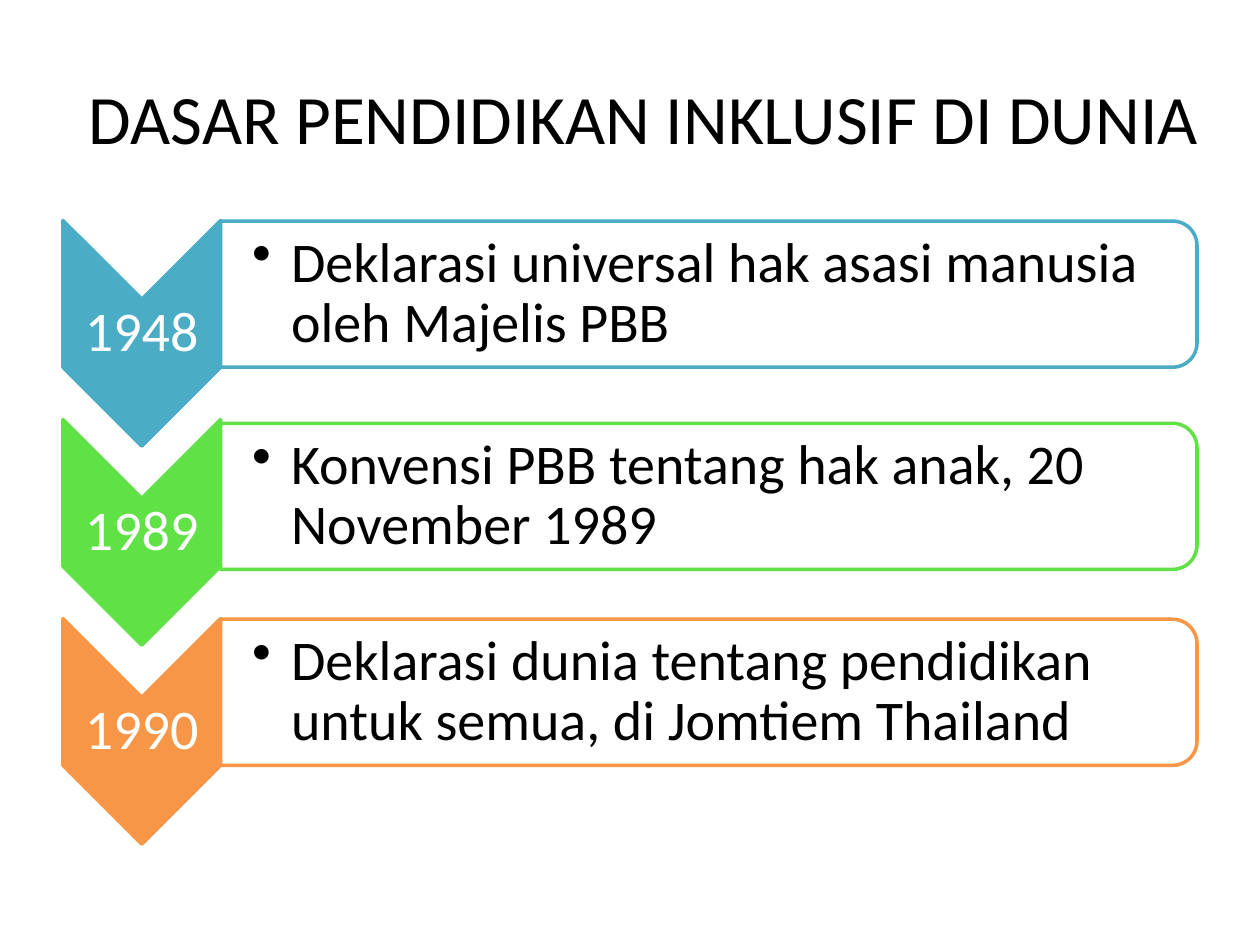
from lxml import etree
from pptx import Presentation
from pptx import util as u
from pptx.dml.color import RGBColor
from pptx.enum import shapes, text
from pptx.oxml.ns import qn

BLACK = RGBColor(0, 0, 0)
WHITE = RGBColor(255, 255, 255)
TEAL = RGBColor(0x4B, 0xAC, 0xC6)
GREEN = RGBColor(0x60, 0xE1, 0x46)
ORANGE = RGBColor(0xF7, 0x96, 0x46)

COLS, ROWS = 100, 75
LEFT, SPLIT = 5, 17.5
FIRST, STEP = 26.45, 15.8
EVENTS = [
    ("1948", "Deklarasi universal hak asasi manusia oleh Majelis PBB", TEAL, 23.35),
    ("1989", "Konvensi PBB tentang hak anak, 20 November 1989", GREEN, 39.4),
    ("1990", "Deklarasi dunia tentang pendidikan untuk semua, di Jomtiem Thailand", ORANGE, 54.95),
]


class Deck:
    font = "Calibri"

    def __init__(self):
        self.show = Presentation()
        self.show.slide_width = u.Inches(10)
        self.show.slide_height = u.Inches(7.5)
        self.slide = self.show.slides.add_slide(self.show.slide_layouts[6])

    def col(self, n):
        return round(self.show.slide_width * n / COLS)

    def row(self, n):
        return round(self.show.slide_height * n / ROWS)

    def turned(self, kind, left, mid, wide, high, fill, line, alpha=None):
        shape = self.slide.shapes.add_shape(
            kind, self.col(left + (wide - high) / 2), self.row(mid - wide / 2),
            self.col(high), self.row(wide))
        shape.rotation = 90
        shape.shadow.inherit = False
        shape.fill.solid()
        shape.fill.fore_color.rgb = fill
        shape.line.color.rgb = line
        shape.line.width = u.Pt(2)
        if alpha:
            tint = shape.fill._xPr.find(qn("a:solidFill"))[0]
            etree.SubElement(tint, qn("a:alpha"), val=str(alpha * 1000))

    def label(self, words, left, mid, wide, high, size, color,
              pad=(0.02, 0.02), space=0.9, bullet=False):
        box = self.slide.shapes.add_textbox(
            self.col(left), self.row(mid - high / 2), self.col(wide), self.row(high))
        frame = box.text_frame
        frame.text = words
        frame.word_wrap = True
        frame.vertical_anchor = text.MSO_ANCHOR.MIDDLE
        frame.margin_left, frame.margin_right = map(u.Inches, pad)
        frame.margin_top = frame.margin_bottom = u.Inches(0.02)
        para = frame.paragraphs[0]
        para.line_spacing = space
        para.alignment = text.PP_ALIGN.LEFT if bullet else text.PP_ALIGN.CENTER
        if bullet:
            para.level = 1
            props = para._p.get_or_add_pPr()
            props.set("marL", str(u.Inches(0.31)))
            props.set("indent", str(-u.Inches(0.31)))
            etree.SubElement(props, qn("a:buChar"), char="•")
        font = para.runs[0].font
        font.name = self.font
        font.size = u.Pt(size)
        font.color.rgb = color

    def event(self, year, words, color, mid, point):
        kinds = shapes.MSO_SHAPE
        wide = SPLIT - LEFT
        self.turned(kinds.CHEVRON, LEFT, point, wide, 17.9, color, color)
        self.label(year, LEFT, point, wide, 5.4, 32, WHITE)
        self.turned(kinds.ROUND_2_SAME_RECTANGLE, SPLIT, mid, 77.5, 11.6, WHITE, color, 90)
        self.label(words, SPLIT, mid, 76.9, 10.5, 32, BLACK, pad=(0.25, 0.02), bullet=True)


# The turned shape's own width runs down the slide.
def turn(deck, kind, left, mid, wide, high, fill, line, alpha=None):
    deck.turned(kind, left, mid, wide, high, fill, line, alpha)


def main():
    deck = Deck()
    deck.label("DASAR PENDIDIKAN INKLUSIF DI DUNIA", LEFT, 9.25, 92.2, 12.7,
               39.6, BLACK, pad=(0.1, 0.1), space=1)
    for i, event in enumerate(EVENTS):
        deck.event(*event, FIRST + i * STEP)
    deck.show.save("out.pptx")


if __name__ == "__main__":
    main()
